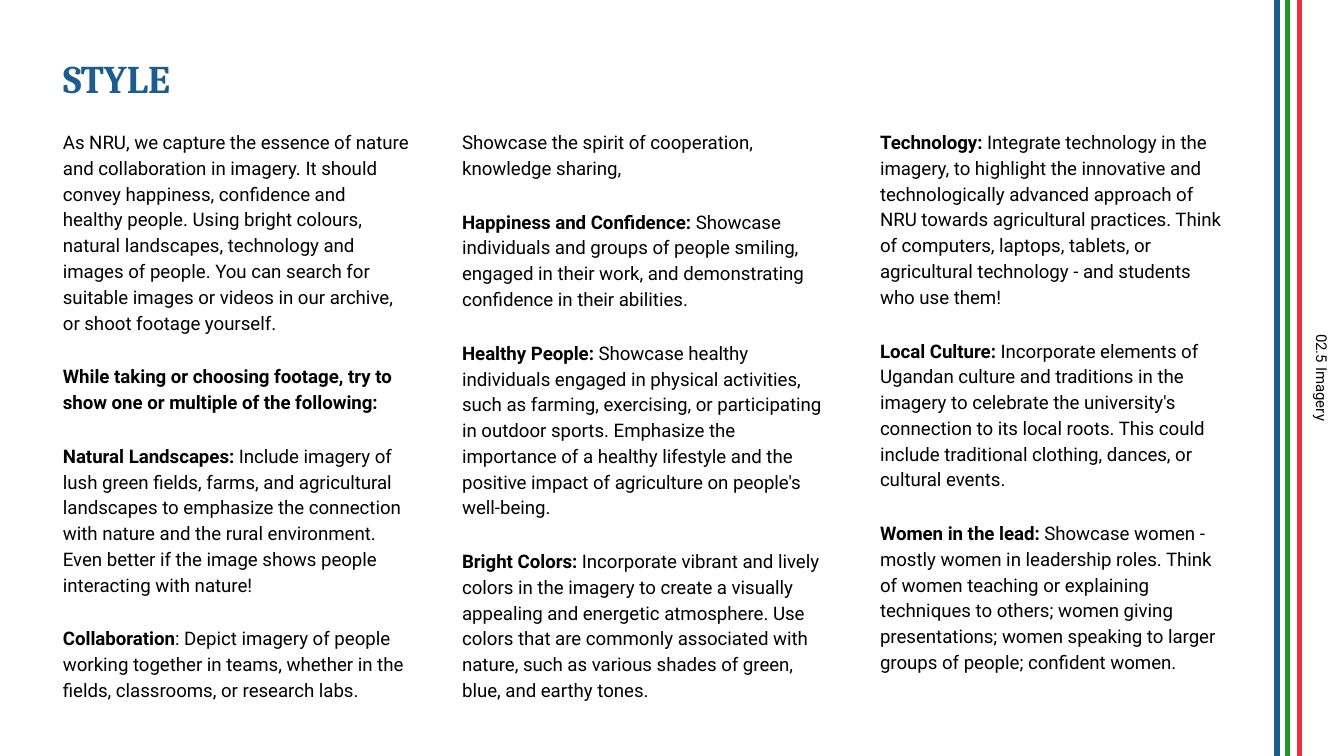
from lxml import etree
from pptx import Presentation
from pptx.dml.color import RGBColor
from pptx.enum import shapes, text
from pptx.oxml.ns import qn
from pptx.util import Inches, Pt

COLORS = {"blue": "1D5D8D", "green": "249428", "red": "EF2E3A", "black": "000000"}

TITLE = "STYLE"
SECTION = "02.5 Imagery"
STRIPES = [(9.5, "blue"), (9.58, "green"), (9.67, "red")]

# Each column: left, width, height, paragraphs of (bold lead, plain text)
COLUMNS = [
    (0.37, 2.77, 4.49, [
        ("", "As NRU, we capture the essence of nature and collaboration in imagery. It should "
             "convey happiness, confidence and healthy people. Using bright colours, natural "
             "landscapes, technology and images of people. You can search for suitable images "
             "or videos in our archive, or shoot footage yourself."),
        ("While taking or choosing footage, try to show one or multiple of the following:", ""),
        ("Natural Landscapes:",
         " Include imagery of lush green fields, farms, and agricultural landscapes to emphasize "
         "the connection with nature and the rural environment. Even better if the image shows "
         "people interacting with nature!"),
        ("Collaboration",
         ": Depict imagery of people working together in teams, whether in the fields, "
         "classrooms, or research labs."),
    ]),
    (3.34, 2.9, 4.49, [
        ("", "Showcase the spirit of cooperation, knowledge sharing,"),
        ("Happiness and Confidence:",
         " Showcase individuals and groups of people smiling, engaged in their work, and "
         "demonstrating confidence in their abilities."),
        ("Healthy People: ",
         "Showcase healthy individuals engaged in physical activities, such as farming, "
         "exercising, or participating in outdoor sports. Emphasize the importance of a healthy "
         "lifestyle and the positive impact of agriculture on people's well-being."),
        ("Bright Colors:",
         " Incorporate vibrant and lively colors in the imagery to create a visually appealing "
         "and energetic atmosphere. Use colors that are commonly associated with nature, such as "
         "various shades of green, blue, and earthy tones."),
    ]),
    (6.45, 2.77, 4.28, [
        ("Technology:",
         " Integrate technology in the imagery, to highlight the innovative and technologically "
         "advanced approach of NRU towards agricultural practices. Think of computers, laptops, "
         "tablets, or agricultural technology - and students who use them!"),
        ("Local Culture:",
         " Incorporate elements of Ugandan culture and traditions in the imagery to celebrate "
         "the university's connection to its local roots. This could include traditional "
         "clothing, dances, or cultural events."),
        ("Women in the lead:",
         " Showcase women - mostly women in leadership roles. Think of women teaching or "
         "explaining techniques to others; women giving presentations; women speaking to larger "
         "groups of people; confident women."),
    ]),
]


def write_text(shape, paragraphs, size=10, font="Roboto", color="black", spacing=1.15,
               before=15, after=15, align=text.PP_ALIGN.LEFT,
               fit=text.MSO_AUTO_SIZE.SHAPE_TO_FIT_TEXT):
    """Fill a shape with (bold, plain) paragraphs; space after goes on the last one."""
    frame = shape.text_frame
    frame.word_wrap = True
    frame.auto_size = fit
    frame.vertical_anchor = text.MSO_ANCHOR.TOP
    frame.margin_left = frame.margin_right = Inches(0.1)
    frame.margin_top = frame.margin_bottom = Inches(0.1)
    for index, parts in enumerate(paragraphs):
        paragraph = frame.add_paragraph() if index else frame.paragraphs[0]
        paragraph.alignment = align
        paragraph.line_spacing = spacing
        paragraph.space_before = Pt(before)
        paragraph.space_after = Pt(after if index == len(paragraphs) - 1 else 0)
        for words, bold in zip(parts, (True, False)):
            if words:
                run = paragraph.add_run()
                run.text = words
                run.font.name = font
                run.font.size = Pt(size)
                run.font.bold = bold
                run.font.color.rgb = RGBColor.from_string(COLORS[color])


def place(shape, left, top, width, height):
    shape.left, shape.top = Inches(left), Inches(top)
    shape.width, shape.height = Inches(width), Inches(height)


def main():
    # Widescreen slide, 16:9
    presentation = Presentation()
    presentation.slide_width = Inches(10)
    presentation.slide_height = Inches(10) * 9 // 16
    slide = presentation.slides.add_slide(presentation.slide_layouts[5])

    # Vertical stripes, running past the slide's edges
    for x, color in STRIPES:
        stripe = slide.shapes.add_connector(
            shapes.MSO_CONNECTOR.STRAIGHT, Inches(x), Inches(-0.22), Inches(x), Inches(5.78))
        stripe.line.color.rgb = RGBColor.from_string(COLORS[color])
        stripe.line.width = Pt(3)
        etree.SubElement(stripe._element.spPr, qn("a:effectLst"))

    # Section label, turned to read downwards
    label = slide.shapes.add_textbox(Inches(7.71), Inches(2.64), Inches(4.24), Inches(0.34))
    label.rotation = 90
    write_text(label, [("", SECTION)], size=8, before=16, after=4, align=text.PP_ALIGN.CENTER)

    # Title
    title = slide.shapes.title
    place(title, 0.37, 0.43, 4.57, 0.51)
    write_text(title, [(TITLE, "")], size=21, font="Cambria", color="blue", spacing=0.6,
               before=0, after=12, fit=text.MSO_AUTO_SIZE.NONE)

    # Text columns
    for left, width, height, paragraphs in COLUMNS:
        column = slide.shapes.add_textbox(Inches(left), Inches(0.85), Inches(width), Inches(height))
        write_text(column, paragraphs)

    presentation.save("out.pptx")


if __name__ == "__main__":
    main()
